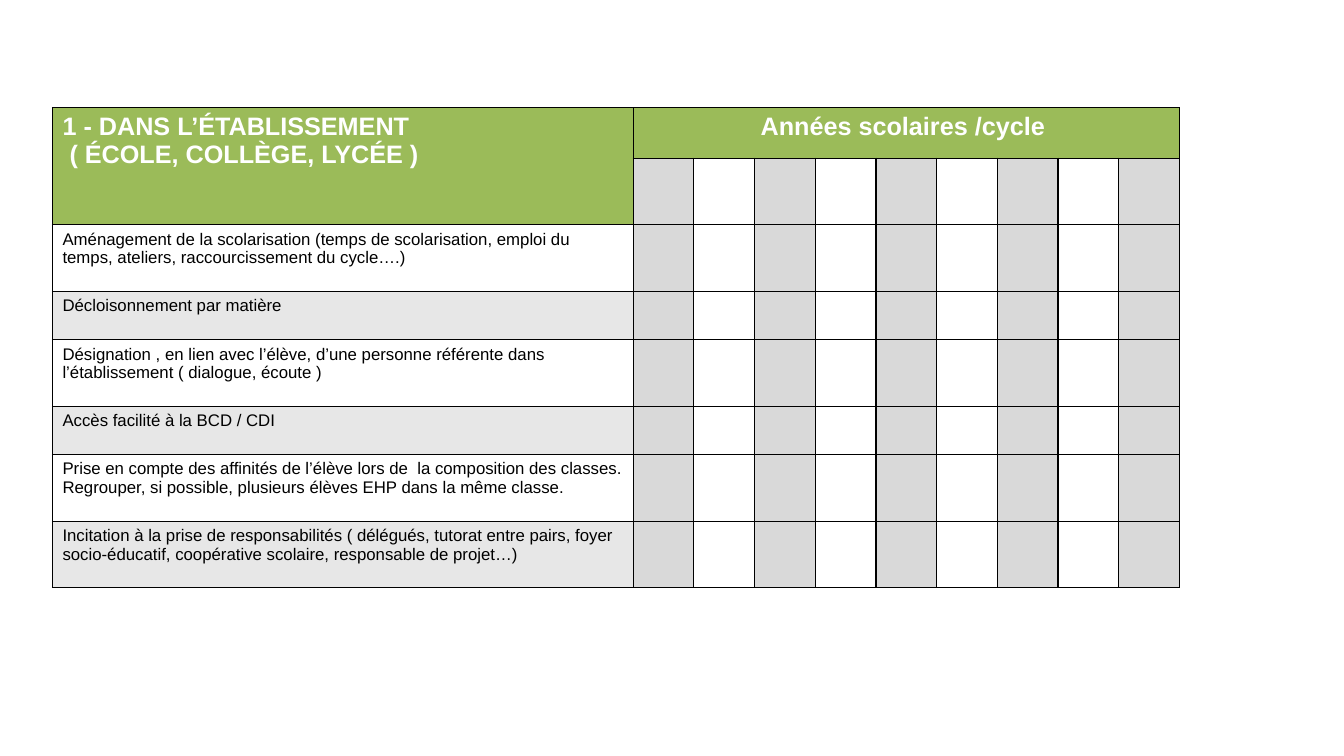
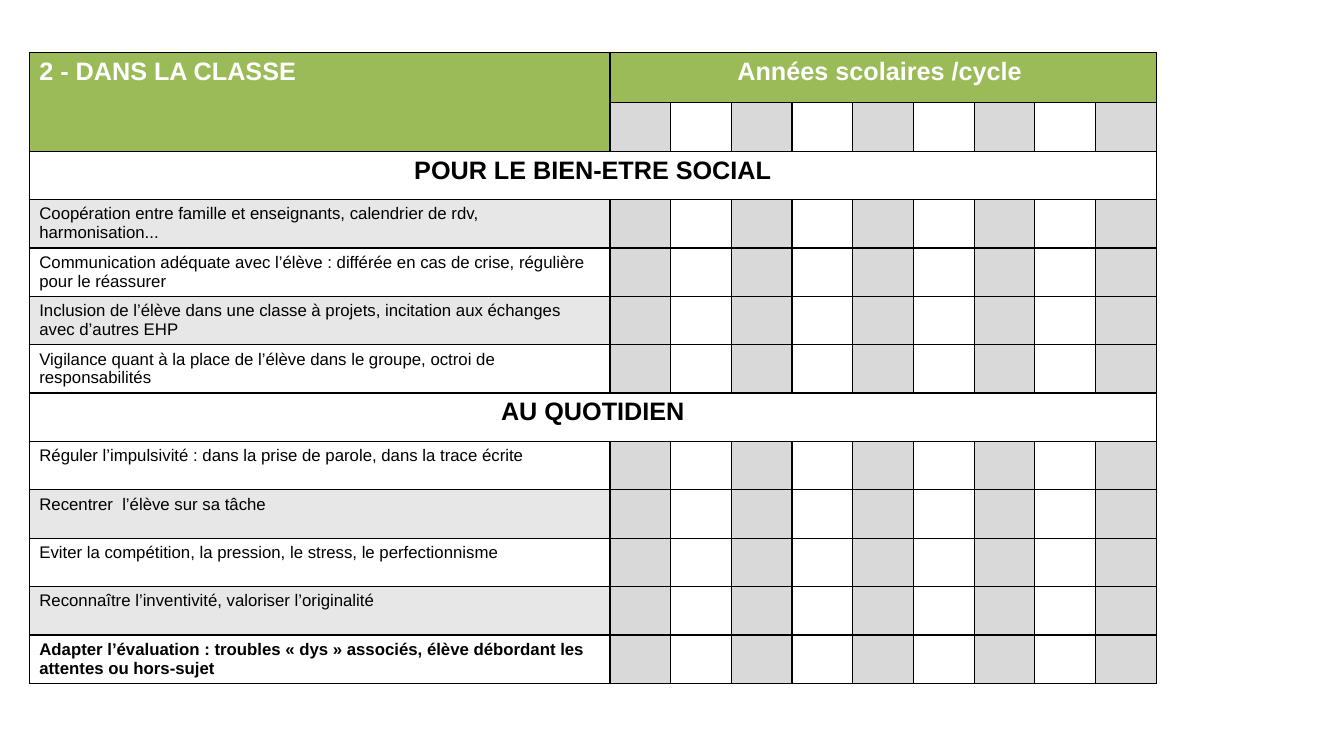
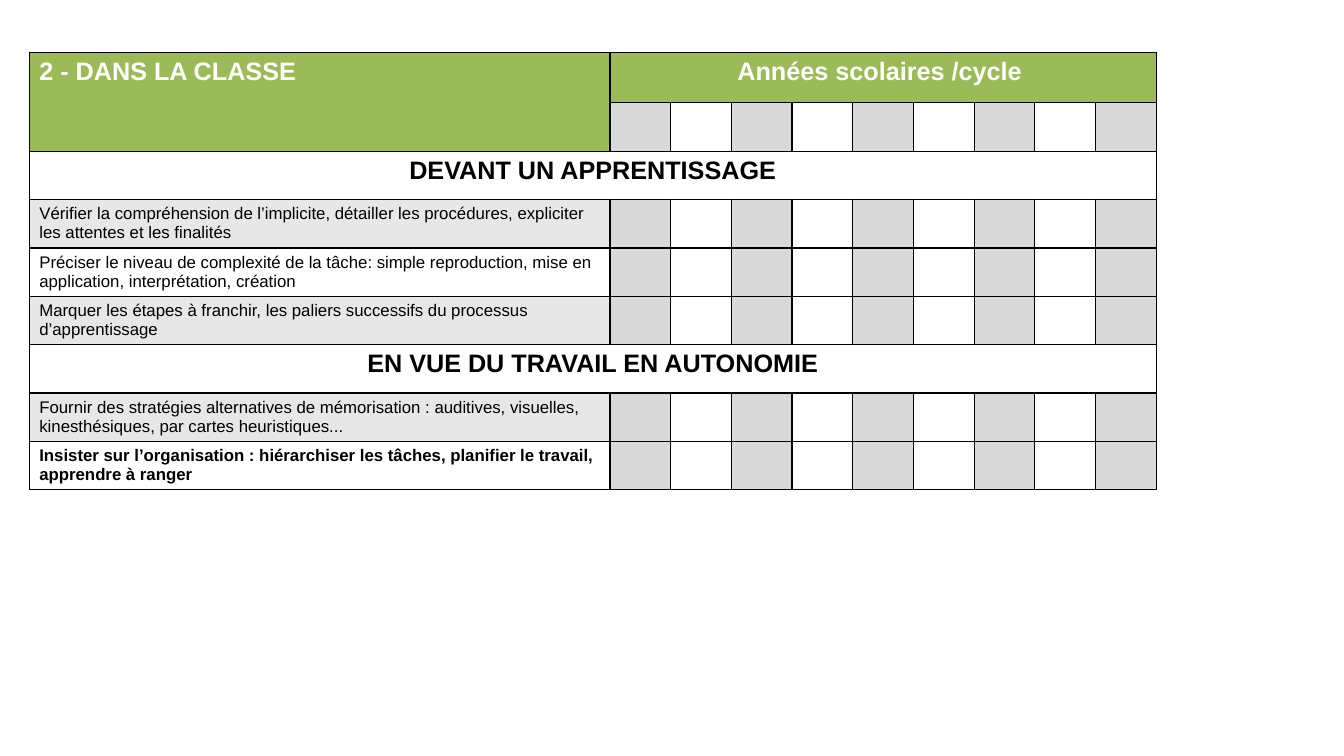
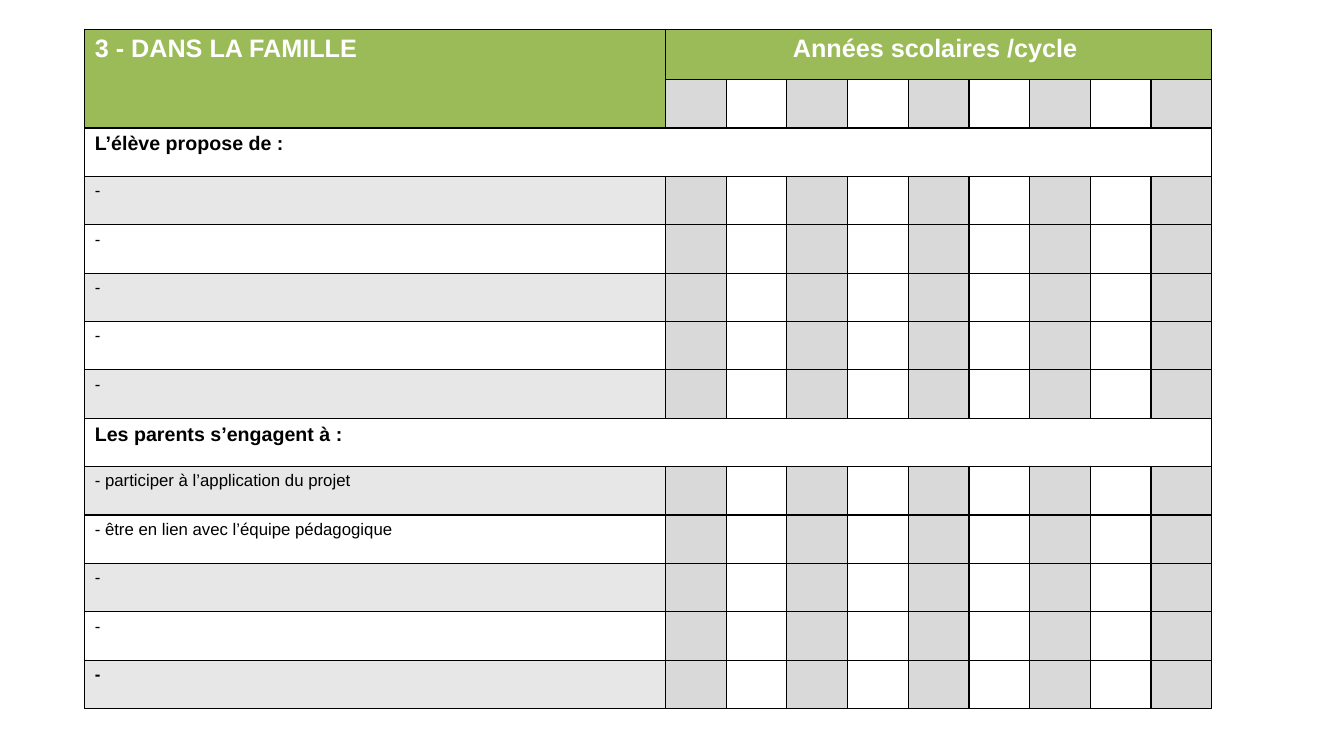
"""Build four checklist slides, each a table of school arrangements by year."""
from lxml import etree
from pptx import Presentation
from pptx.dml.color import RGBColor
from pptx.enum import text
from pptx.oxml import ns
from pptx.util import Inches, Pt

GREEN = RGBColor(0x9B, 0xBB, 0x59)
YEAR_GREY = RGBColor(0xD9, 0xD9, 0xD9)
BAND_GREY = RGBColor(0xE7, 0xE7, 0xE7)
WHITE = RGBColor(0xFF, 0xFF, 0xFF)
BLACK = RGBColor(0, 0, 0)
FONT = "Arial"
LEFT, CENTER = text.PP_ALIGN.LEFT, text.PP_ALIGN.CENTER

YEARS = 9
TABLE_W, LABEL_W = 11.18, 5.76
HEAD_H, ROW_H, TALL_H = 0.5, 0.48, 0.66
YEARS_TITLE = "Années scolaires /cycle "

SLIDES = [
    {"title": "1 - DANS L’ÉTABLISSEMENT\n ( ÉCOLE, COLLÈGE, LYCÉE )",
     "at": (0.52, 1.07), "tall_rows": (1, 2, 4, 6, 7), "bold_last": False,
     "sections": [(None, [
         "Aménagement de la scolarisation (temps de scolarisation, emploi du temps, ateliers, raccourcissement du cycle….)",
         "Décloisonnement par matière",
         "Désignation , en lien avec l’élève, d’une personne référente dans l’établissement ( dialogue, écoute )",
         "Accès facilité à la BCD / CDI",
         "Prise en compte des affinités de l’élève lors de  la composition des classes. Regrouper, si possible, plusieurs élèves EHP dans la même classe.",
         "Incitation à la prise de responsabilités ( délégués, tutorat entre pairs, foyer socio-éducatif, coopérative scolaire, responsable de projet…)",
     ])]},
    {"title": "2 - DANS LA CLASSE", "at": (0.29, 0.52),
     "sections": [
         ("POUR LE BIEN-ETRE SOCIAL", [
             "Coopération entre famille et enseignants, calendrier de rdv, harmonisation...",
             "Communication adéquate avec l’élève : différée en cas de crise, régulière pour le réassurer",
             "Inclusion de l’élève dans une classe à projets, incitation aux échanges avec d’autres EHP",
             "Vigilance quant à la place de l’élève dans le groupe, octroi de responsabilités",
         ]),
         ("AU QUOTIDIEN", [
             "Réguler l’impulsivité : dans la prise de parole, dans la trace écrite",
             "Recentrer  l’élève sur sa tâche",
             "Eviter la compétition, la pression, le stress, le perfectionnisme",
             "Reconnaître l’inventivité, valoriser l’originalité",
             "Adapter l’évaluation : troubles « dys » associés, élève débordant les attentes ou hors-sujet",
         ])]},
    {"title": "2 - DANS LA CLASSE", "at": (0.29, 0.52),
     "sections": [
         ("DEVANT UN APPRENTISSAGE", [
             "Vérifier la compréhension de l’implicite, détailler les procédures, expliciter les attentes et les finalités",
             "Préciser le niveau de complexité de la tâche: simple reproduction, mise en application, interprétation, création",
             "Marquer les étapes à franchir, les paliers successifs du processus d’apprentissage",
         ]),
         ("EN VUE DU TRAVAIL EN AUTONOMIE", [
             "Fournir des stratégies alternatives de mémorisation : auditives, visuelles, kinesthésiques, par cartes heuristiques...",
             "Insister sur l’organisation : hiérarchiser les tâches, planifier le travail, apprendre à ranger",
         ])]},
    {"title": "3 - DANS LA FAMILLE", "at": (0.84, 0.29),
     "section_size": 14, "section_align": LEFT,
     "sections": [
         ("L’élève propose de :", ["-"] * 5),
         ("Les parents s’engagent à :", [
             "- participer à l’application du projet",
             "- être en lien avec l’équipe pédagogique",
             "-", "-", "-",
         ])]},
]


def write(cell, words, size, color=BLACK, bold=False, align=LEFT):
    cell.text_frame.text = words
    for p in cell.text_frame.paragraphs:
        p.alignment = align
        for r in p.runs:
            f = r.font
            f.name, f.size, f.bold = FONT, Pt(size), bold
            f.color.rgb = color


def paint(cell, color):
    cell.fill.solid()
    cell.fill.fore_color.rgb = color


def add_borders(cell):
    tc_pr = cell._tc.get_or_add_tcPr()
    for i, side in enumerate(("lnL", "lnR", "lnT", "lnB")):
        ln = etree.Element(ns.qn("a:" + side), w=str(Pt(1)))
        fill = etree.SubElement(ln, ns.qn("a:solidFill"))
        etree.SubElement(fill, ns.qn("a:srgbClr"), val=str(BLACK))
        tc_pr.insert(i, ln)


def add_checklist(s, data):
    rows = []
    for heading, items in data["sections"]:
        if heading:
            rows.append((heading, True))
        rows += [(item, False) for item in items]
    tall = data.get("tall_rows", ())
    heights = [HEAD_H] + [TALL_H if i in tall else ROW_H for i in range(1, len(rows) + 2)]
    left, top = data["at"]
    table = s.shapes.add_table(len(heights), YEARS + 1, Inches(left), Inches(top),
                               Inches(TABLE_W), Inches(sum(heights))).table
    table.first_row = table.horz_banding = False
    for row, height in zip(table.rows, heights):
        row.height = Inches(height)
    for i, column in enumerate(table.columns):
        column.width = Inches((TABLE_W - LABEL_W) / YEARS if i else LABEL_W)

    for i in range(len(heights)):
        for j in range(YEARS + 1):
            cell = table.cell(i, j)
            if i == 0 or (i == 1 and j == 0):
                paint(cell, GREEN)
            elif j == 0:
                paint(cell, BAND_GREY if i % 2 else WHITE)
            else:
                paint(cell, YEAR_GREY if j % 2 else WHITE)
            add_borders(cell)

    table.cell(0, 0).merge(table.cell(1, 0))
    table.cell(0, 1).merge(table.cell(0, YEARS))
    write(table.cell(0, 0), data["title"], 18, WHITE, True)
    write(table.cell(0, 1), YEARS_TITLE, 18, WHITE, True, CENTER)
    for i, (words, is_heading) in enumerate(rows, 2):
        cell = table.cell(i, 0)
        if is_heading:
            cell.merge(table.cell(i, YEARS))
            paint(cell, WHITE)
            write(cell, words, data.get("section_size", 18), bold=True,
                  align=data.get("section_align", CENTER))
        else:
            is_last = i == len(heights) - 1
            write(cell, words, 12, bold=is_last and data.get("bold_last", True))


def main():
    prs = Presentation()
    prs.slide_width, prs.slide_height = Inches(13.33), Inches(7.5)
    for data in SLIDES:
        add_checklist(prs.slides.add_slide(prs.slide_layouts[6]), data)
    prs.save("out.pptx")


if __name__ == "__main__":
    main()
